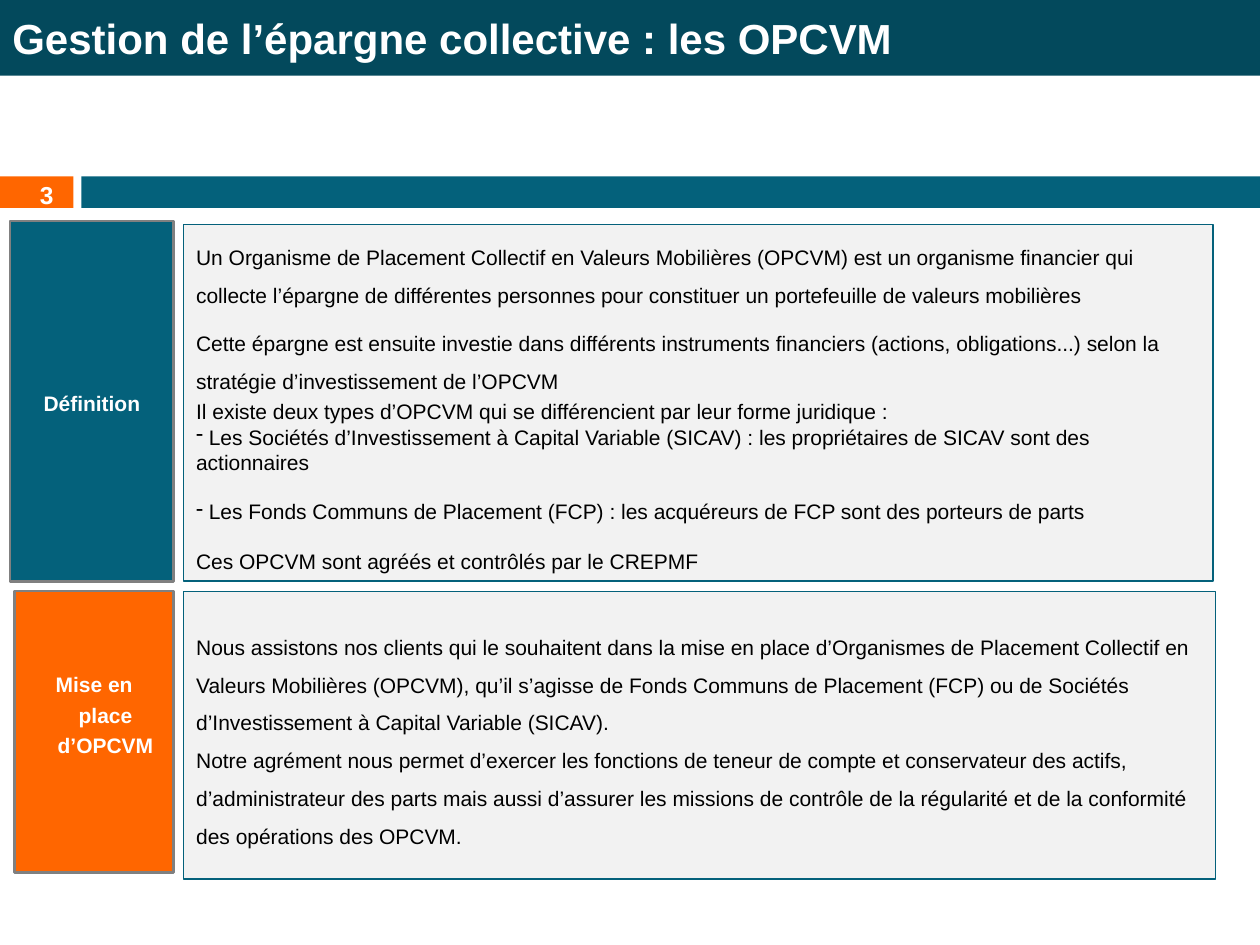
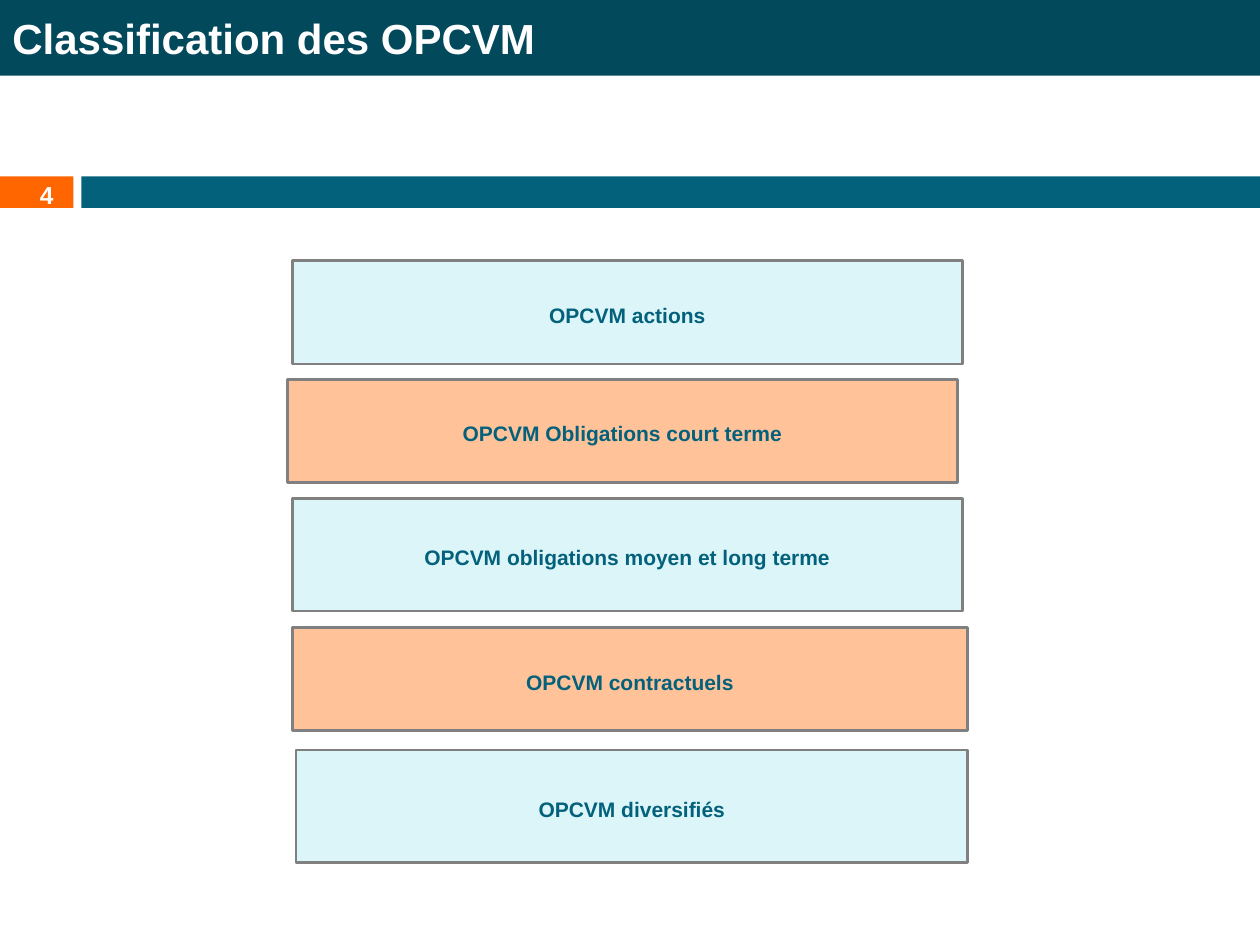
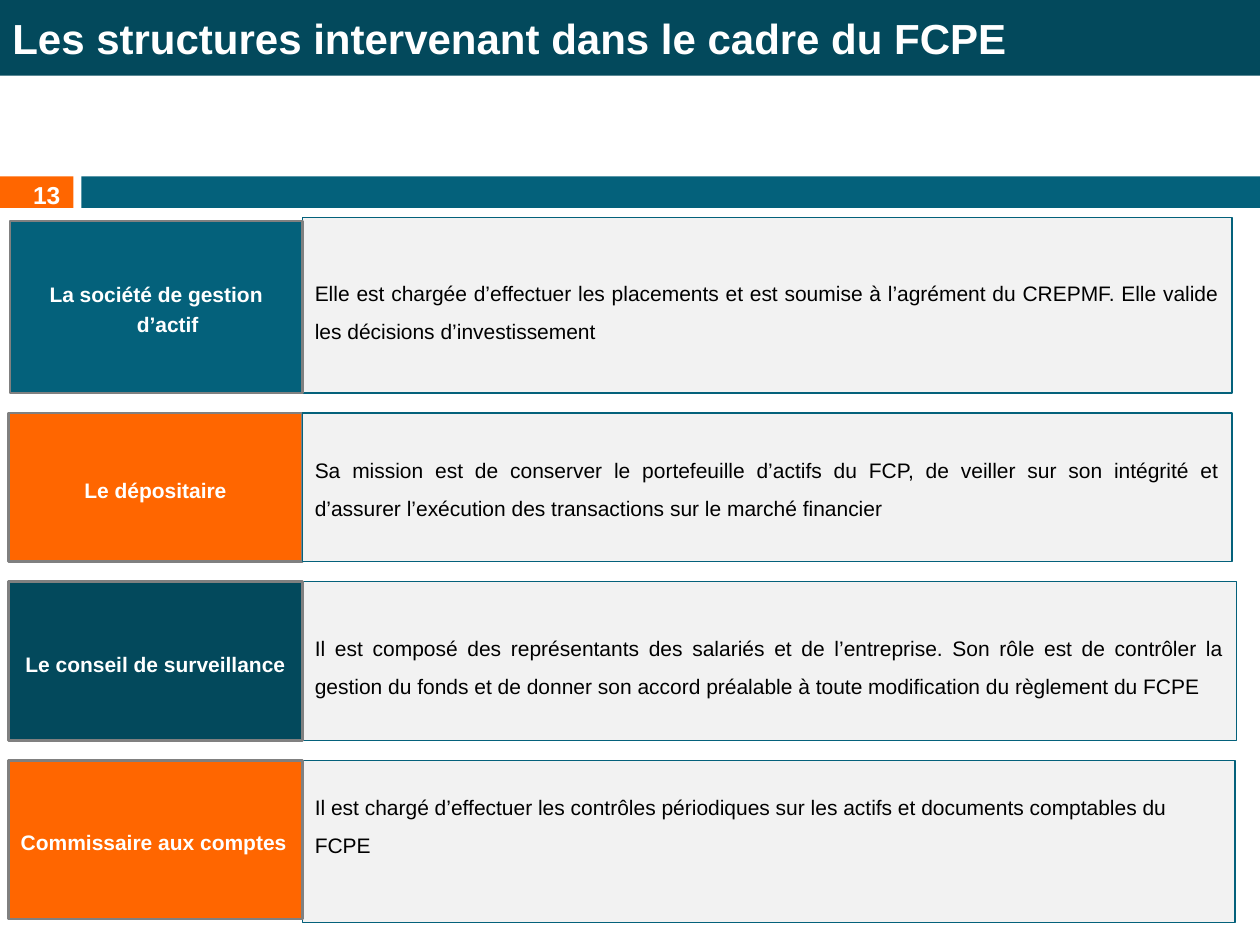
from dataclasses import dataclass, field
from typing import Any

from lxml import etree
from pptx import Presentation
from pptx.dml.color import RGBColor
from pptx.enum import shapes, text
from pptx.oxml import ns
from pptx.util import Pt

LEFT, MID, JUST = text.PP_ALIGN.LEFT, text.PP_ALIGN.CENTER, text.PP_ALIGN.JUSTIFY


@dataclass(frozen=True)
class Theme:
    font: str = "Arial"
    teal: str = "04617B"
    dark: str = "03495C"
    orange: str = "FF6600"
    peach: str = "FFC299"
    ice: str = "DBF5F9"
    pale: str = "F2F2F2"
    grey: str = "808080"
    white: str = "FFFFFF"
    black: str = "000000"
    title: int = 24
    number: int = 14
    body: int = 12


T = Theme()
PLAIN = {"alignment": LEFT}
CENTRE = {"alignment": MID}
TIGHT = {"line_spacing": 1.2, "space_before": Pt(3), "space_after": Pt(3)}
LABEL = {**CENTRE, **TIGHT}
OPEN = {**PLAIN, "line_spacing": 1.5}
ROOMY = {**OPEN, "space_before": Pt(3), "space_after": Pt(3)}
FULL = {**ROOMY, "alignment": JUST}
APART = {**PLAIN, "space_before": Pt(13.8)}


@dataclass(frozen=True)
class Para:
    words: str
    form: dict[str, Any] = field(default_factory=lambda: PLAIN)
    hang: float = 0
    bullet: str = ""


@dataclass(frozen=True)
class Box:
    """A filled rectangle; lift adds room under its text, in points."""
    left: float
    top: float
    width: float
    height: float
    fill: str
    paras: tuple[Para, ...] = ()
    line: str = ""
    weight: float = 0.75
    size: int = T.body
    ink: str = T.white
    bold: bool = True
    lift: float = 0


def rgb(code: str) -> RGBColor:
    return RGBColor.from_string(code)


def apply(item: Any, form: dict[str, Any]) -> None:
    for key, value in form.items():
        setattr(item, key, value)


def write(frame: Any, box: Box) -> None:
    apply(frame, {"word_wrap": True, "vertical_anchor": text.MSO_ANCHOR.MIDDLE,
                  "margin_bottom": Pt(3.6 + box.lift)})
    for i, para in enumerate(box.paras):
        p = frame.add_paragraph() if i else frame.paragraphs[0]
        apply(p, para.form)
        run = p.add_run()
        run.text = para.words
        apply(run.font, {"name": T.font, "size": Pt(box.size), "bold": box.bold})
        run.font.color.rgb = rgb(box.ink)
        props = p._p.get_or_add_pPr()
        if para.hang:
            props.set("marL", str(Pt(para.hang)))
            props.set("indent", str(Pt(-para.hang)))
        if para.bullet:
            etree.SubElement(props, ns.qn("a:buChar"), char=para.bullet)


def draw(slide: Any, box: Box) -> None:
    spot = [Pt(n) for n in (box.left, box.top, box.width, box.height)]
    if not box.fill:
        write(slide.shapes.add_textbox(*spot).text_frame, box)
        return
    shape = slide.shapes.add_shape(shapes.MSO_SHAPE.RECTANGLE, *spot)
    shape.shadow.inherit = False
    shape.fill.solid()
    shape.fill.fore_color.rgb = rgb(box.fill)
    if box.line:
        shape.line.color.rgb = rgb(box.line)
        shape.line.width = Pt(box.weight)
    else:
        shape.line.fill.background()
    write(shape.text_frame, box)


def label(words: str, left: float, top: float, width: float, height: float,
          fill: str, ink: str = T.white, form: dict[str, Any] = LABEL,
          lift: float = 0) -> Box:
    return Box(left, top, width, height, fill, (Para(words, form, 13),),
               T.grey, 1.5, ink=ink, lift=lift)


def panel(left: float, top: float, width: float, height: float,
          *paras: Para, lift: float = 0) -> Box:
    return Box(left, top, width, height, T.pale, paras, T.teal,
               ink=T.black, bold=False, lift=lift)


def page(deck: Any, title: str, number: int, boxes: list[Box]) -> None:
    slide = deck.slides.add_slide(deck.slide_layouts[6])
    frame = [
        Box(0, 100.8, 42, 18, T.orange),
        Box(46.5, 100.8, 673.5, 18, T.teal),
        Box(0, 0, 720, 43.2, T.dark, (Para(title),), size=T.title),
        Box(5.8, 101.5, 41.8, 19.4, "", (Para(str(number), CENTRE),), size=T.number),
    ]
    for box in frame + boxes:
        draw(slide, box)


def define() -> list[Box]:
    return [
        panel(105, 337.8, 589.7, 164.5,
              Para("Nous assistons nos clients qui le souhaitent dans la mise en place d’Organismes de Placement Collectif en Valeurs Mobilières (OPCVM), qu’il s’agisse de Fonds Communs de Placement (FCP) ou de Sociétés d’Investissement à Capital Variable (SICAV).", OPEN),
              Para("Notre agrément nous permet d’exercer les fonctions de teneur de compte et conservateur des actifs, d’administrateur des parts mais aussi d’assurer les missions de contrôle de la régularité et de la conformité des opérations des OPCVM.", OPEN)),
        label("Définition", 5.8, 126.2, 93.4, 206, T.teal),
        label("Mise en place d’OPCVM", 8.4, 337.8, 90.8, 160.8, T.orange, lift=22.5),
        panel(105, 128.2, 588.2, 203.8,
              Para("Un Organisme de Placement Collectif en Valeurs Mobilières (OPCVM) est un organisme financier qui collecte l’épargne de différentes personnes pour constituer un portefeuille de valeurs mobilières", ROOMY),
              Para("Cette épargne est ensuite investie dans différents instruments financiers (actions, obligations...) selon la stratégie d’investissement de l’OPCVM", ROOMY),
              Para("Il existe deux types d’OPCVM qui se différencient par leur forme juridique :"),
              Para(" Les Sociétés d’Investissement à Capital Variable (SICAV) : les propriétaires de SICAV sont des actionnaires", bullet="-"),
              Para(" Les Fonds Communs de Placement (FCP) : les acquéreurs de FCP sont des porteurs de parts", APART, bullet="-"),
              Para("Ces OPCVM sont agréés et contrôlés par le CREPMF", APART)),
    ]


def classify() -> list[Box]:
    rows = [
        ("OPCVM actions", 167, 149, 383, 59),
        ("OPCVM Obligations court terme", 164.2, 216.8, 383, 59),
        ("OPCVM obligations moyen et long terme", 167, 284.8, 383, 64.4),
        ("OPCVM contractuels", 167, 358.6, 386, 59),
        ("OPCVM diversifiés", 169.2, 428.6, 383.8, 64.4),
    ]
    return [label(*row, fill=(T.ice, T.peach)[i % 2], ink=T.teal)
            for i, row in enumerate(rows)]


def involve() -> list[Box]:
    return [
        panel(172.8, 124.4, 531.2, 100.2,
              Para("Elle est chargée d’effectuer les placements et est soumise à l’agrément du CREPMF. Elle valide les décisions d’investissement", FULL)),
        label("La société de gestion d’actif", 5.8, 126.2, 167, 98.4, T.teal),
        panel(172.8, 332.4, 533.8, 90.8,
              Para("Il est composé des représentants des salariés et de l’entreprise. Son rôle est de contrôler la gestion du fonds et de donner son accord préalable à toute modification du règlement du FCPE", FULL)),
        label("Le conseil de surveillance", 4.8, 332.4, 168.2, 90.8, T.dark),
        label("Le dépositaire", 4.8, 236, 168.2, 85, T.orange),
        panel(172.8, 236, 531.2, 85,
              Para("Sa mission est de conserver le portefeuille d’actifs du FCP, de veiller sur son intégrité et d’assurer l’exécution des transactions sur le marché financier", FULL),
              lift=5),
        panel(172.8, 434.4, 533, 92.6,
              Para("Il est chargé d’effectuer les contrôles périodiques sur les actifs et documents comptables du FCPE", ROOMY),
              lift=24.5),
        label("Commissaire aux comptes", 4.8, 434.4, 168.2, 90.8, T.orange,
              form={**PLAIN, **TIGHT}),
    ]


def main() -> None:
    deck = Presentation()
    apply(deck, {"slide_width": Pt(720), "slide_height": Pt(540)})
    page(deck, "Gestion de l’épargne collective : les OPCVM", 3, define())
    page(deck, "Classification des OPCVM", 4, classify())
    page(deck, "Les structures intervenant dans le cadre du FCPE", 13, involve())
    deck.save("out.pptx")


if __name__ == "__main__":
    main()
